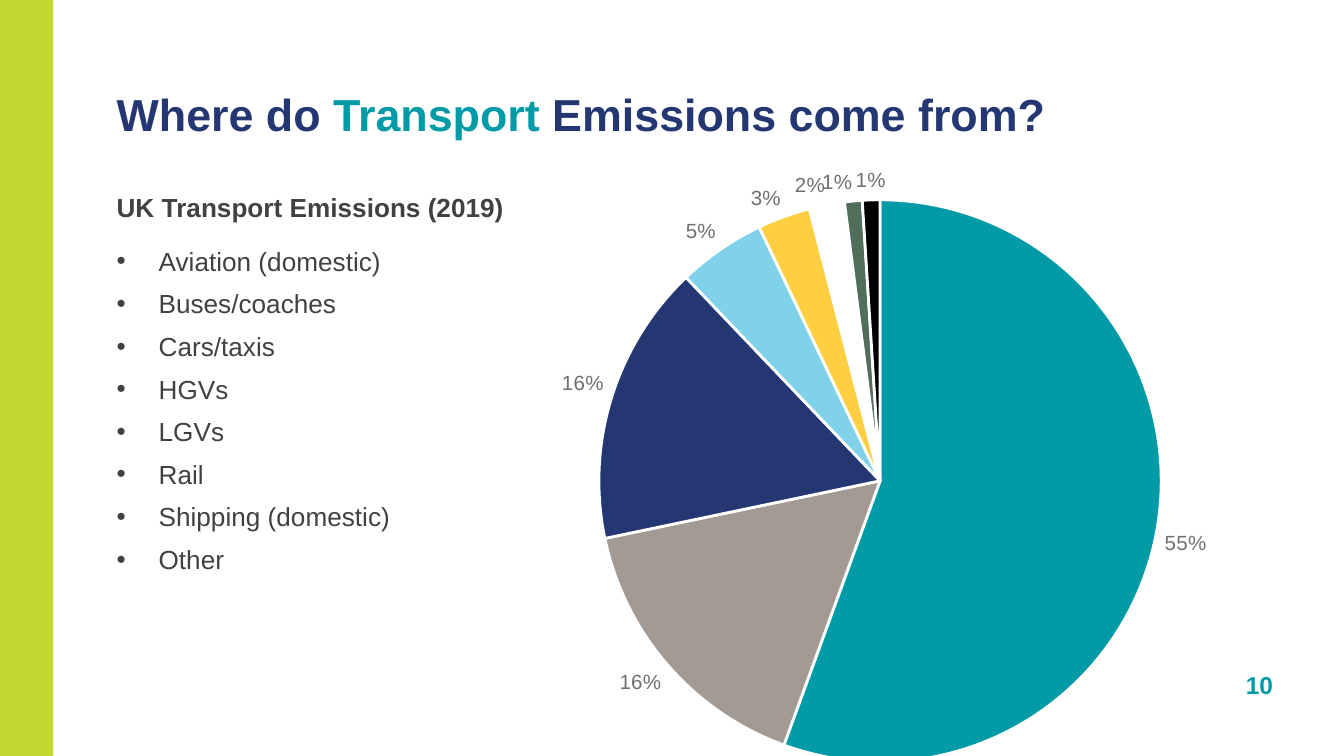
from pptx import Presentation
from pptx.chart.data import CategoryChartData
from pptx.dml.color import RGBColor
from pptx.enum.chart import XL_CHART_TYPE, XL_LABEL_POSITION
from pptx.enum.shapes import MSO_SHAPE
from pptx.enum.text import MSO_ANCHOR, PP_ALIGN
from pptx.oxml import parse_xml
from pptx.oxml.ns import nsdecls, qn
from pptx.util import Pt

PIE, OUTSIDE = XL_CHART_TYPE.PIE, XL_LABEL_POSITION.OUTSIDE_END
RECT = MSO_SHAPE.RECTANGLE
TOP, BOTTOM = MSO_ANCHOR.TOP, MSO_ANCHOR.BOTTOM
LEFT, RIGHT = PP_ALIGN.LEFT, PP_ALIGN.RIGHT

FONT = "Arial"
COLORS = {
    "lime": "C0D631", "teal": "009BA7", "navy": "253773", "text": "414042",
    "label": "706F72", "taupe": "A39A94", "sky": "7FD2EA", "yellow": "FFCF41",
    "white": "FFFFFF", "green": "506E5A", "black": "000000",
}
MODES = ["Aviation (domestic)", "Buses/coaches", "Cars/taxis", "HGVs", "LGVs",
         "Rail", "Shipping (domestic)", "Other"]
SHARES = [("teal", 0.55), ("taupe", 0.16), ("navy", 0.16), ("sky", 0.05),
          ("yellow", 0.03), ("white", 0.02), ("green", 0.01), ("black", 0.01)]


def rgb(name):
    return RGBColor.from_string(COLORS[name])


def style_font(font, size, color, bold=False):
    font.name, font.size, font.bold = FONT, Pt(size), bold
    font.color.rgb = rgb(color)


def add_run(p, text, size=14, color="text", bold=False):
    r = p.add_run()
    r.text = text
    style_font(r.font, size, color, bold)


class Deck:
    """Hold the presentation style and the current slide."""

    def __init__(self, width, height):
        self.prs = Presentation()
        self.prs.slide_width, self.prs.slide_height = Pt(width), Pt(height)
        self.s = self.prs.slides.add_slide(self.prs.slide_layouts[6])

    def rect(self, x, y, w, h, color):
        sp = self.s.shapes.add_shape(RECT, Pt(x), Pt(y), Pt(w), Pt(h))
        sp.shadow.inherit = False
        sp.fill.solid()
        sp.fill.fore_color.rgb = rgb(color)
        sp.line.fill.background()

    def text(self, x, y, w, h, runs, anchor=TOP, align=LEFT, inset=(0, 0), **fmt):
        tf = self.s.shapes.add_textbox(Pt(x), Pt(y), Pt(w), Pt(h)).text_frame
        tf.word_wrap = True
        tf.vertical_anchor = anchor
        tf.margin_left = tf.margin_right = Pt(inset[0])
        tf.margin_top = tf.margin_bottom = Pt(inset[1])
        p = tf.paragraphs[0]
        p.alignment = align
        for text, color in runs:
            add_run(p, text, color=color, **fmt)
        return tf

    def bullets(self, tf, items, indent=22.5):
        for i, item in enumerate(items):
            p = tf.add_paragraph()
            pPr = p._p.get_or_add_pPr()
            pPr.set("marL", str(Pt(indent)))
            pPr.set("indent", str(-Pt(indent)))
            for xml in (
                f'<a:buClr {nsdecls("a")}><a:srgbClr val="{COLORS["text"]}"/></a:buClr>',
                f'<a:buFont {nsdecls("a")} typeface="{FONT}"/>',
                f'<a:buChar {nsdecls("a")} char="•"/>',
            ):
                pPr.append(parse_xml(xml))
            p.space_before = Pt(6 if i else 12)
            add_run(p, item)

    def pie(self, x, y, w, h, shares, layout):
        data = CategoryChartData(number_format="0%")
        data.categories = [str(i + 1) for i in range(len(shares))]
        data.add_series("Series 1", [value for _, value in shares])
        chart = self.s.shapes.add_chart(PIE, Pt(x), Pt(y), Pt(w), Pt(h), data).chart
        chart.has_title = chart.has_legend = False
        style_font(chart.font, 10, "text")
        plot = chart.plots[0]
        plot.vary_by_categories = True
        for i, (color, _) in enumerate(shares):
            fmt = plot.series[0].points[i].format
            fmt.fill.solid()
            fmt.fill.fore_color.rgb = rgb(color)
            fmt.line.color.rgb = rgb("white")
            fmt.line.width = Pt(1.5)
        labels = plot.series[0].data_labels
        labels.show_value = True
        labels.show_percentage = labels.show_category_name = False
        labels.number_format, labels.number_format_is_linked = "0%", False
        labels.position = OUTSIDE
        style_font(labels.font, 11, "label")
        self.place_plot(chart, layout)

    def place_plot(self, chart, layout):
        area = chart.element.find(qn("c:chart")).find(qn("c:plotArea"))
        for old in area.findall(qn("c:layout")):
            area.remove(old)
        sizes = "".join(f'<c:{k} val="{v}"/>' for k, v in zip("xywh", layout))
        area.insert(0, parse_xml(
            f'<c:layout {nsdecls("c")}><c:manualLayout><c:layoutTarget val="inner"/>'
            f'<c:xMode val="edge"/><c:yMode val="edge"/>{sizes}'
            '</c:manualLayout></c:layout>'))


def main():
    deck = Deck(720, 405)
    deck.rect(-8.5, -3, 37, 411, "lime")
    deck.text(632, 355, 57, 23, [("10", "teal")], anchor=BOTTOM, align=RIGHT,
              inset=(7.2, 3.6), size=13.1, bold=True)
    body = deck.text(62.5, 102.5, 338, 231,
                     [("UK Transport Emissions (2019)", "text")], bold=True)
    deck.bullets(body, MODES)
    deck.text(62.5, 44, 536, 31,
              [("Where do ", "navy"), ("Transport", "teal"),
               (" Emissions come from?", "navy")],
              anchor=BOTTOM, size=24, bold=True)
    deck.pie(247, 80, 453.5, 338.5, SHARES, layout=(0.16, 0.08, 0.67, 0.89))
    deck.prs.save("out.pptx")


if __name__ == "__main__":
    main()
